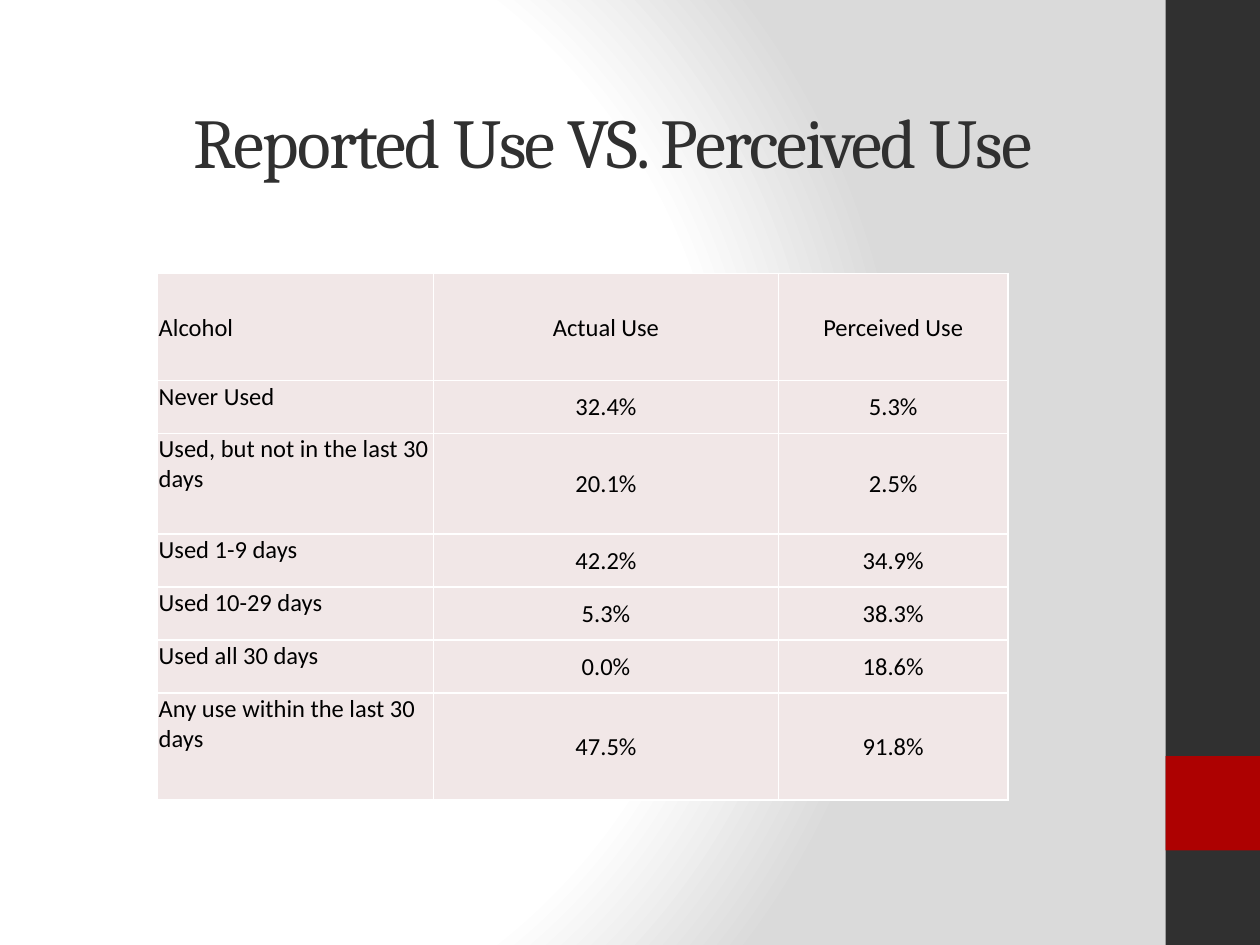
from lxml.etree import SubElement
from pptx import Presentation
from pptx.dml.color import RGBColor
from pptx.enum.shapes import MSO_SHAPE as Preset
from pptx.enum.text import MSO_ANCHOR as Anchor, MSO_AUTO_SIZE as AutoSize, PP_ALIGN as Align
from pptx.oxml import parse_xml
from pptx.oxml.ns import nsdecls, qn
from pptx.util import Inches, Pt

CHARCOAL = RGBColor(0x30, 0x30, 0x30)
RED = RGBColor(0xAD, 0x01, 0x01)
BLUSH = RGBColor(0xF1, 0xE7, 0xE7)
BLACK = RGBColor(0, 0, 0)
WHITE = RGBColor(0xFF, 0xFF, 0xFF)
SILVER = RGBColor(0xDA, 0xDA, 0xDA)

COLUMN_WIDTHS = [2.19, 2.74, 1.82]
ROW_HEIGHTS = [0.85, 0.42, 0.8, 0.42, 0.42, 0.42, 0.85]
ALCOHOL_USE = [
    ("Alcohol", "Actual Use", "Perceived Use"),
    ("Never Used", "32.4%", "5.3%"),
    ("Used, but not in the last 30 days", "20.1%", "2.5%"),
    ("Used 1-9 days", "42.2%", "34.9%"),
    ("Used 10-29 days", "5.3%", "38.3%"),
    ("Used all 30 days", "0.0%", "18.6%"),
    ("Any use within the last 30 days", "47.5%", "91.8%"),
]


def set_background(page):
    page.background.fill.solid()
    properties = page.background._cSld.find(qn("p:bg")).find(qn("p:bgPr"))
    stops = "".join(
        f'<a:gs pos="{position * 1000}"><a:srgbClr val="{color}"/></a:gs>'
        for position, color in [(0, WHITE), (75, WHITE), (100, SILVER)]
    )
    gradient = parse_xml(
        f'<a:gradFill {nsdecls("a")} rotWithShape="1"><a:gsLst>{stops}</a:gsLst>'
        '<a:path path="circle"><a:fillToRect l="20000" t="50000" r="100000" b="50000"/>'
        "</a:path></a:gradFill>"
    )
    properties.replace(properties.find(qn("a:solidFill")), gradient)


def add_band(page, top, height, color):
    band = page.shapes.add_shape(
        Preset.RECTANGLE, Inches(9.25), Inches(top), Inches(0.75), Inches(height)
    )
    band.shadow.inherit = False
    band.fill.solid()
    band.fill.fore_color.rgb = color
    band.line.fill.background()


def add_span(para, text, font_name, size, color):
    span = para.add_run()
    span.text = text
    span.font.name = font_name
    span.font.size = Pt(size)
    span.font.color.rgb = color
    return span


def set_title(page, text):
    title = page.shapes.title
    title.left, title.top = Inches(0.7), Inches(1.11)
    title.width, title.height = Inches(8.33), Inches(0.75)
    frame = title.text_frame
    frame.word_wrap = True
    frame.auto_size = AutoSize.NONE
    frame.vertical_anchor = Anchor.MIDDLE
    para = frame.paragraphs[0]
    para.alignment = Align.CENTER
    span = add_span(para, text, "Cambria", 40, CHARCOAL)
    span.font._element.set("spc", "-100")
    para.add_line_break()


def add_borders(cell):
    properties = cell._tc.get_or_add_tcPr()
    for side in ("lnL", "lnR", "lnT", "lnB"):
        line = SubElement(properties, qn(f"a:{side}"), w=str(Pt(1)))
        fill = SubElement(line, qn("a:solidFill"))
        SubElement(fill, qn("a:srgbClr"), val=str(WHITE))


def format_cell(cell, text, is_label, is_header):
    add_borders(cell)
    cell.fill.solid()
    cell.fill.fore_color.rgb = BLUSH
    cell.margin_left = cell.margin_right = cell.margin_top = Inches(0.01)
    cell.margin_bottom = 0
    cell.vertical_anchor = Anchor.TOP if is_label and not is_header else Anchor.MIDDLE
    para = cell.text_frame.paragraphs[0]
    para.alignment = Align.LEFT if is_label else Align.CENTER
    add_span(para, text, "Calibri", 14, BLACK)


def add_use_table(page):
    table = page.shapes.add_table(
        len(ROW_HEIGHTS), len(COLUMN_WIDTHS), Inches(1.25), Inches(2.17),
        Inches(sum(COLUMN_WIDTHS)), Inches(sum(ROW_HEIGHTS)),
    ).table
    table.first_row = False
    table.horz_banding = False
    for column, width in zip(table.columns, COLUMN_WIDTHS):
        column.width = Inches(width)
    for row, height in zip(table.rows, ROW_HEIGHTS):
        row.height = Inches(height)
    for row_index, texts in enumerate(ALCOHOL_USE):
        for column_index, text in enumerate(texts):
            cell = table.cell(row_index, column_index)
            format_cell(cell, text, column_index == 0, row_index == 0)


def main():
    deck = Presentation()
    deck.slide_width, deck.slide_height = Inches(10), Inches(7.5)
    page = deck.slides.add_slide(deck.slide_layouts[5])
    set_background(page)
    add_band(page, 0, 7.5, CHARCOAL)
    add_band(page, 6, 0.75, RED)
    set_title(page, "Reported Use VS. Perceived Use")
    add_use_table(page)
    deck.save("out.pptx")


if __name__ == "__main__":
    main()
